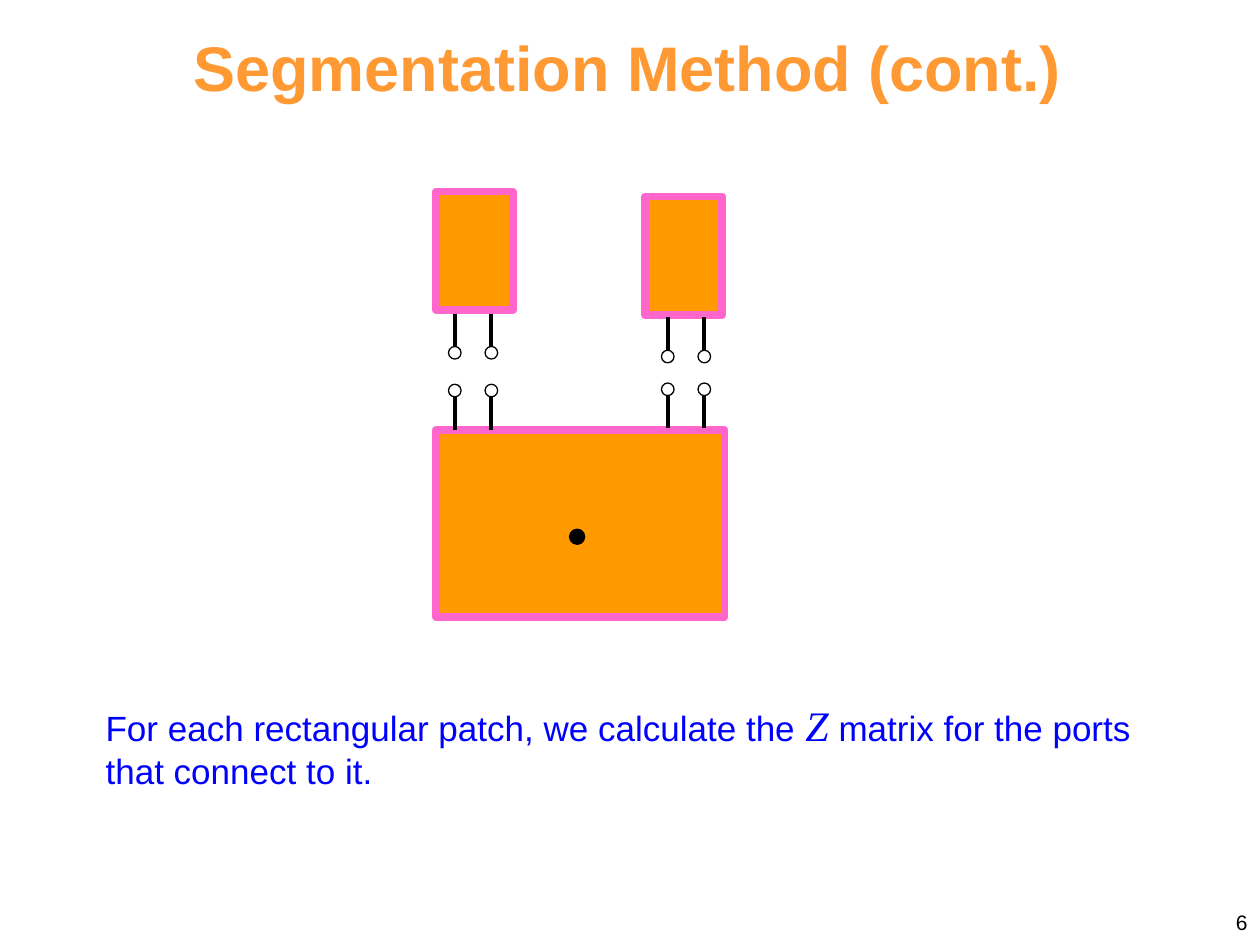
from pptx import Presentation
from pptx.dml.color import RGBColor
from pptx.enum.shapes import MSO_CONNECTOR, MSO_SHAPE
from pptx.enum.text import MSO_ANCHOR, PP_ALIGN
from pptx.oxml.ns import qn
from pptx.util import Inches, Pt
from lxml import etree

COLORS = {"title": "FF9933", "body": "0000FF", "patch": "FF9900",
          "edge": "FF66CC", "ink": "000000"}

# Content
TITLE = "Segmentation Method (cont.)"
BODY = [
    ("For each rectangular patch, we calculate the ", {}),
    ("Z", {"font": "Times New Roman", "size": 24, "italic": True}),
    (" matrix for the ports that connect to it.", {}),
]
PAGE_NUMBER = "6"

# Patches: left, top, width, height
PATCHES = [(3.46, 3.41, 2.29, 1.49), (3.46, 1.52, 0.61, 0.94), (5.12, 1.56, 0.61, 0.94)]
FEED_POINT = (4.52, 4.2, 0.12)

# Ports: x of the first lead, y at the patch, y at the terminal
PORTS = [(3.61, 2.49, 2.75), (5.3, 2.52, 2.78), (3.61, 3.41, 3.15), (5.3, 3.4, 3.14)]
LEAD_GAP = 0.29
TERMINAL = 0.1


def color(name):
    return RGBColor.from_string(COLORS[name])


def write(paragraph, text, font="Arial", size=20, fill="body", bold=False, italic=False):
    span = paragraph.add_run()
    span.text = text
    span.font.name = font
    span.font.size = Pt(size)
    span.font.bold = bold
    span.font.italic = italic
    span.font.color.rgb = color(fill)


def place(shape, left, top, width, height):
    shape.left, shape.top = Inches(left), Inches(top)
    shape.width, shape.height = Inches(width), Inches(height)


def add_text_box(page, *position):
    box = page.shapes.add_textbox(*map(Inches, position))
    box.text_frame.word_wrap = True
    return box.text_frame


def add_figure(shapes, kind, position, fill=None, line="ink", weight=0.75):
    figure = shapes.add_shape(kind, *map(Inches, position))
    figure.shadow.inherit = False
    if fill:
        figure.fill.solid()
        figure.fill.fore_color.rgb = color(fill)
    else:
        figure.fill.background()
    figure.line.color.rgb = color(line)
    figure.line.width = Pt(weight)


def add_port(page, left, patch_y, terminal_y):
    """Two leads from a patch edge, each ending in an open terminal."""
    shapes = page.shapes.add_group_shape().shapes
    circle_top = terminal_y if terminal_y > patch_y else terminal_y - TERMINAL
    for x in (left, left + LEAD_GAP):
        lead = shapes.add_connector(MSO_CONNECTOR.STRAIGHT, Inches(x), Inches(patch_y),
                                    Inches(x), Inches(terminal_y))
        lead.line.color.rgb = color("ink")
        lead.line.width = Pt(2.25)
        etree.SubElement(lead.element.find(qn("p:spPr")), qn("a:effectLst"))
        add_figure(shapes, MSO_SHAPE.OVAL,
                   (x - TERMINAL / 2, circle_top, TERMINAL, TERMINAL))


def main():
    deck = Presentation()
    deck.slide_width, deck.slide_height = Inches(10), Inches(7.5)
    page = deck.slides.add_slide(deck.slide_layouts[5])

    # Title
    title = page.shapes.title
    place(title, 1.34, 0.27, 7.28, 0.52)
    title.text_frame.vertical_anchor = MSO_ANCHOR.MIDDLE
    heading = title.text_frame.paragraphs[0]
    heading.alignment = PP_ALIGN.CENTER
    write(heading, TITLE, size=36, fill="title", bold=True)

    # Explanation
    sentence = add_text_box(page, 0.74, 5.5, 8.4, 0.83).paragraphs[0]
    for text, style in BODY:
        write(sentence, text, **style)

    # Patches and feed point
    for position in PATCHES:
        add_figure(page.shapes, MSO_SHAPE.RECTANGLE, position, "patch", "edge", 4.5)
    left, top, size = FEED_POINT
    add_figure(page.shapes, MSO_SHAPE.OVAL, (left, top, size, size), "ink")

    # Ports
    for port in PORTS:
        add_port(page, *port)

    # Page number
    footer = add_text_box(page, 7.67, 6.98, 2.33, 0.52)
    footer.vertical_anchor = MSO_ANCHOR.BOTTOM
    footer.margin_bottom = Inches(0.08)
    footer.paragraphs[0].alignment = PP_ALIGN.RIGHT
    write(footer.paragraphs[0], PAGE_NUMBER, size=12, fill="ink")

    deck.save("out.pptx")


if __name__ == "__main__":
    main()
